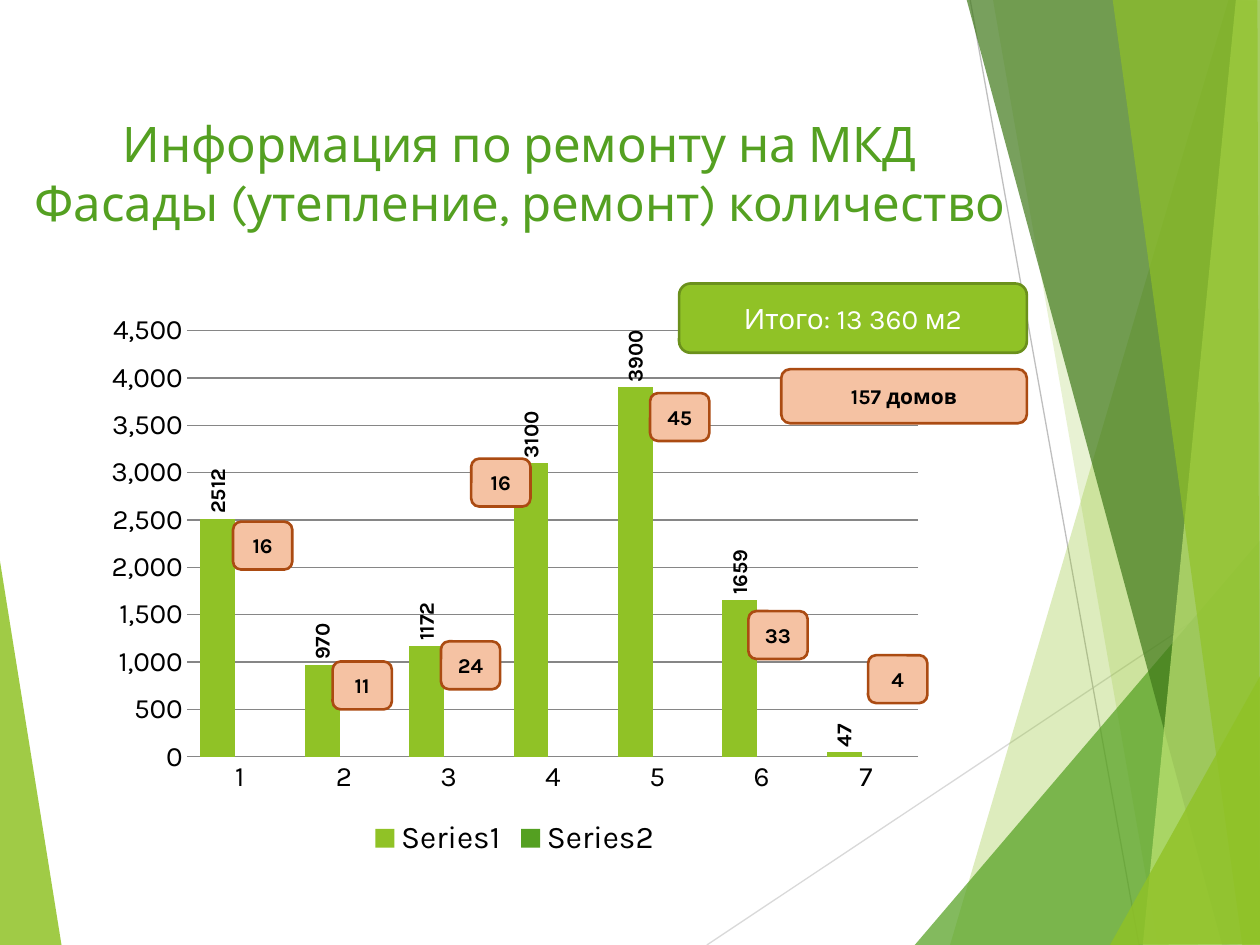
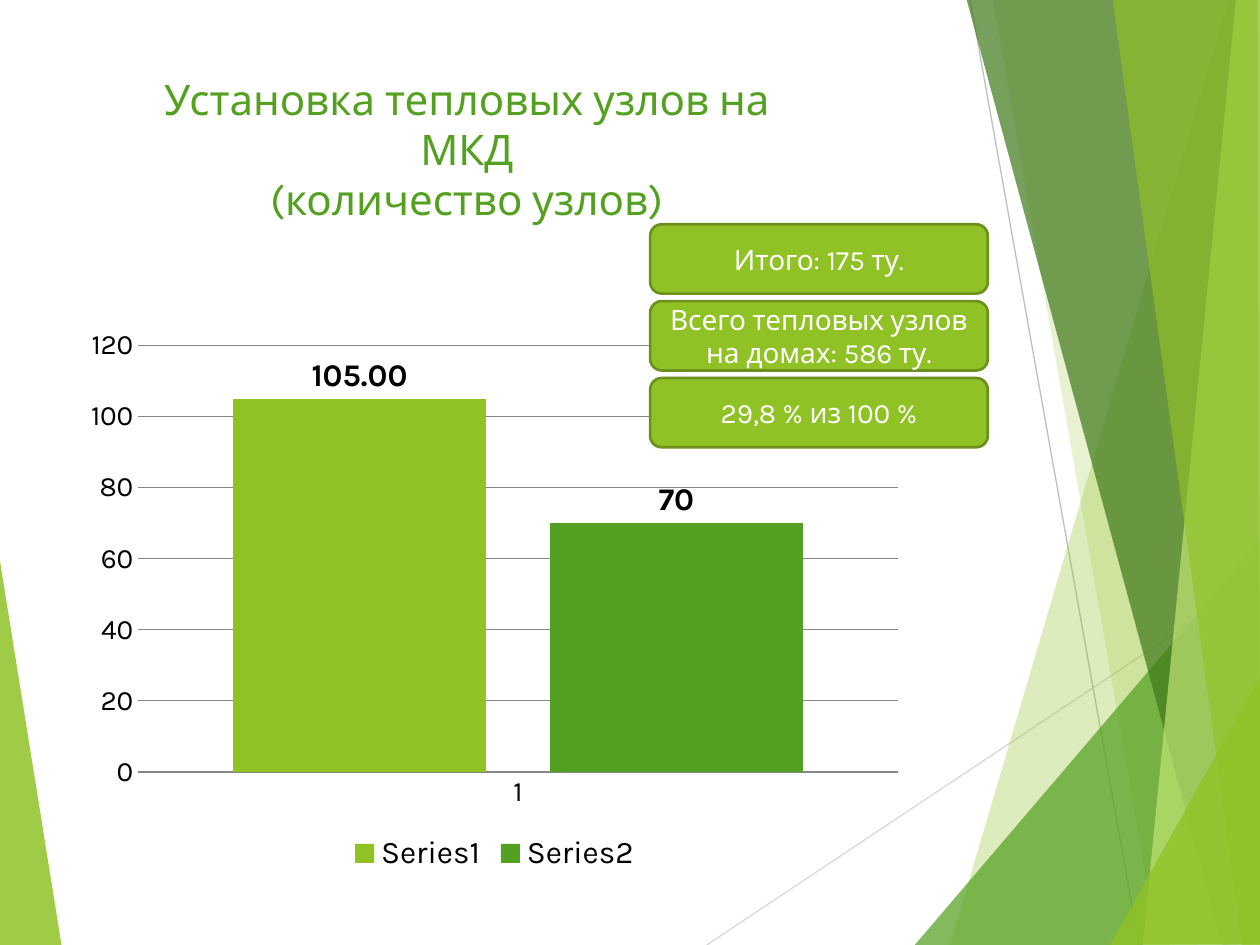
from dataclasses import dataclass

from lxml import etree
from pptx import Presentation
from pptx.chart.data import CategoryChartData
from pptx.dml.color import RGBColor
from pptx.enum.chart import XL_CHART_TYPE as ChartType
from pptx.enum.chart import XL_LABEL_POSITION as LabelPosition
from pptx.enum.chart import XL_LEGEND_POSITION as LegendPosition
from pptx.enum.chart import XL_TICK_MARK as TickMark
from pptx.enum.shapes import MSO_CONNECTOR as Connector
from pptx.enum.shapes import MSO_SHAPE as Shape
from pptx.enum.text import MSO_ANCHOR as Anchor
from pptx.enum.text import PP_ALIGN as Align
from pptx.oxml.ns import qn
from pptx.util import Inches, Pt

FONT = "Karla"
LIME = RGBColor(0x90, 0xC2, 0x26)
GREEN = RGBColor(0x54, 0xA0, 0x21)
DARK_GREEN = RGBColor(0x3F, 0x78, 0x19)
PALE_LIME = RGBColor(0xC0, 0xE4, 0x74)
LIME_EDGE = RGBColor(0x6B, 0x90, 0x1C)
PEACH = RGBColor(0xF5, 0xC2, 0xA3)
RUST = RGBColor(0xAB, 0x4B, 0x12)
BLACK = RGBColor(0, 0, 0)
WHITE = RGBColor(0xFF, 0xFF, 0xFF)
GRID_GRAY = RGBColor(0x86, 0x86, 0x86)
RAY_LIGHT = RGBColor(0xD9, 0xD9, 0xD9)
RAY_GRAY = RGBColor(0xBF, 0xBF, 0xBF)


@dataclass
class Box:
    left: float
    top: float
    width: float
    height: float

    def inches(self):
        return [Inches(v) for v in (self.left, self.top, self.width, self.height)]

    def inner(self, dx, dy, width, height):
        return Box(self.left + dx, self.top + dy, width, height)


PAGE = Box(0, 0, 10, 7.5)

RAYS = [
    ((5.61, 7.5), (10.01, 4.57), RAY_LIGHT),
    ((7.7, 0), (9.04, 7.5), RAY_GRAY),
]
# colour, opacity in percent, corners
LEFT_FACET = (LIME, 85, [(-0.01, 4.39), (0.49, 7.51), (-0.01, 7.5)])
RIGHT_FACETS = [
    (LIME, 30, [(9.75, 0), (7.54, 7.5), (10.02, 7.51), (10.01, 0.01)]),
    (LIME, 20, [(7.88, -0.01), (9.19, 7.5), (10.01, 7.5), (10.01, -0.01)]),
    (GREEN, 72, [(7.26, 7.5), (10, 4.29), (10.01, 7.5)]),
    (DARK_GREEN, 70, [(7.67, -0.01), (9.7, 7.5), (10.01, 7.49), (10.01, -0.01)]),
    (PALE_LIME, 70, [(9.81, -0.01), (9.07, 7.5), (10.01, 7.5), (10, -0.01)]),
    (LIME, 65, [(8.83, -0.01), (9.86, 7.5), (10, 7.5), (9.98, -0.01)]),
    (LIME, 80, [(8.81, 7.5), (10.01, 5.35), (10.01, 7.49)]),
]


def style_font(font, size, color, bold=False):
    font.name = FONT
    font.size = Pt(size)
    font.bold = bold
    font.color.rgb = color


def add_facet(slide, box, color, opacity, corners):
    points = [(Inches(box.left + x), Inches(box.top + y)) for x, y in corners]
    builder = slide.shapes.build_freeform(*points[0])
    builder.add_line_segments(points[1:], close=True)
    facet = builder.convert_to_shape()
    facet.shadow.inherit = False
    facet.line.fill.background()
    facet.fill.solid()
    facet.fill.fore_color.rgb = color
    tint = facet.element.spPr.find(qn("a:solidFill"))[0]
    etree.SubElement(tint, qn("a:alpha"), val=str(opacity * 1000))


def add_ray(slide, box, start, end, color):
    ends = [Inches(v) for x, y in (start, end) for v in (box.left + x, box.top + y)]
    ray = slide.shapes.add_connector(Connector.STRAIGHT, *ends)
    ray.line.color.rgb = color
    ray.line.width = Pt(0.75)
    etree.SubElement(ray.element.spPr, qn("a:effectLst"))


def add_backdrop(slide, box):
    add_facet(slide, box, *LEFT_FACET)
    for ray in RAYS:
        add_ray(slide, box, *ray)
    for facet in RIGHT_FACETS:
        add_facet(slide, box, *facet)


def set_title(slide, box, lines, size):
    title = slide.shapes.title
    title.left, title.top, title.width, title.height = box.inches()
    frame = title.text_frame
    frame.word_wrap = True
    frame.vertical_anchor = Anchor.TOP
    paragraph = frame.paragraphs[0]
    paragraph.alignment = Align.CENTER
    for number, line in enumerate(lines):
        if number:
            paragraph.add_line_break()
        paragraph.add_run().text = line
    style_font(paragraph.font, size, GREEN)
    # bring the title in front of the backdrop
    title.element.getparent().append(title.element)


def start_slide(deck, title_box, title_lines, title_size):
    slide = deck.slides.add_slide(deck.slide_layouts[5])
    add_backdrop(slide, PAGE)
    set_title(slide, title_box, title_lines, title_size)
    return slide


def add_plaque(slide, box, text, size, fill, edge, color, bold):
    plaque = slide.shapes.add_shape(Shape.ROUNDED_RECTANGLE, *box.inches())
    plaque.shadow.inherit = False
    plaque.fill.solid()
    plaque.fill.fore_color.rgb = fill
    plaque.line.color.rgb = edge
    plaque.line.width = Pt(1.5)
    frame = plaque.text_frame
    frame.word_wrap = True
    frame.vertical_anchor = Anchor.MIDDLE
    paragraph = frame.paragraphs[0]
    paragraph.text = text
    paragraph.alignment = Align.CENTER
    style_font(paragraph.font, size, color, bold)


def add_total(slide, box, text):
    add_plaque(slide, box, text, 16, LIME, LIME_EDGE, WHITE, False)


def add_houses(slide, box, text):
    add_plaque(slide, box, text, 12, PEACH, RUST, BLACK, True)


def label_values(series, size, number_format="General"):
    labels = series.data_labels
    labels.show_value = True
    labels.position = LabelPosition.OUTSIDE_END
    labels.number_format = number_format
    labels.number_format_is_linked = False
    style_font(labels.font, size, BLACK, True)


def add_column_chart(slide, box, categories, columns, maximum, step):
    data = CategoryChartData()
    data.categories = categories
    for number, values in enumerate(columns, 1):
        data.add_series(f"Series{number}", values)
    chart = slide.shapes.add_chart(
        ChartType.COLUMN_CLUSTERED, *box.inches(), data).chart
    chart.has_title = False
    style_font(chart.font, 18, BLACK)
    chart.has_legend = True
    chart.legend.position = LegendPosition.BOTTOM
    chart.legend.include_in_layout = False

    plot = chart.plots[0]
    plot.gap_width = 75
    plot.overlap = -25
    plot.vary_by_categories = False
    for series, color in zip(plot.series, (LIME, GREEN)):
        series.format.fill.solid()
        series.format.fill.fore_color.rgb = color

    for axis in (chart.category_axis, chart.value_axis):
        axis.major_tick_mark = axis.minor_tick_mark = TickMark.NONE
        style_font(axis.tick_labels.font, 16, BLACK)
    scale = chart.value_axis
    scale.minimum_scale, scale.maximum_scale, scale.major_unit = 0, maximum, step
    scale.tick_labels.number_format = "#,##0"
    scale.tick_labels.number_format_is_linked = False
    scale.format.line.fill.background()
    for line in (scale.major_gridlines.format.line, chart.category_axis.format.line):
        line.color.rgb = GRID_GRAY
        line.width = Pt(0.75)
    return chart


def build_facades_slide(deck):
    slide = start_slide(
        deck, Box(0.12, 0.85, 8.01, 1.25),
        ["Информация по ремонту на МКД", "Фасады (утепление, ремонт) количество"], 28)
    chart_box = Box(0.75, 2.41, 6.67, 4.44)
    areas = [2512, 970, 1172, 3100, 3900, 1659, 47]
    categories = [str(n) for n in range(1, len(areas) + 1)]
    chart = add_column_chart(
        slide, chart_box, categories, [areas, [None] * len(areas)], 4500, 500)
    label_values(chart.plots[0].series[0], 12)
    for body in chart.element.xpath(".//c:dLbls//a:bodyPr"):
        body.set("rot", "-5400000")
        body.set("vert", "horz")

    add_total(slide, Box(5.39, 2.25, 2.76, 0.55), "Итого: 13 360 м2")
    add_houses(slide, Box(6.2, 2.93, 1.95, 0.43), "157 домов")
    house_counts = [
        ("16", 1.1, 1.73), ("11", 1.89, 2.84), ("24", 2.75, 2.68), ("16", 2.99, 1.23),
        ("45", 4.41, 0.71), ("33", 5.19, 2.44), ("4", 6.14, 2.79),
    ]
    for count, dx, dy in house_counts:
        add_houses(slide, chart_box.inner(dx, dy, 0.47, 0.38), count)


def build_heat_units_slide(deck):
    slide = start_slide(
        deck, Box(0.91, 0.53, 5.59, 0.94),
        ["Установка тепловых узлов на МКД", "(количество узлов)"], 24)
    chart = add_column_chart(
        slide, Box(0.59, 2.53, 6.67, 4.44), ["1"], [[105], [70]], 120, 20)
    for series, number_format in zip(chart.plots[0].series, ("#,##0.00", "General")):
        label_values(series, 18, number_format)

    totals = ["Итого: 175 ту.", "Всего тепловых узлов на домах: 586 ту.",
              "29,8 % из 100 %"]
    for row, text in enumerate(totals):
        add_total(slide, Box(5.16, 1.78 + row * 0.61, 2.68, 0.55), text)


def main():
    deck = Presentation()
    deck.slide_width, deck.slide_height = Inches(PAGE.width), Inches(PAGE.height)
    build_facades_slide(deck)
    build_heat_units_slide(deck)
    deck.save("out.pptx")


if __name__ == "__main__":
    main()
